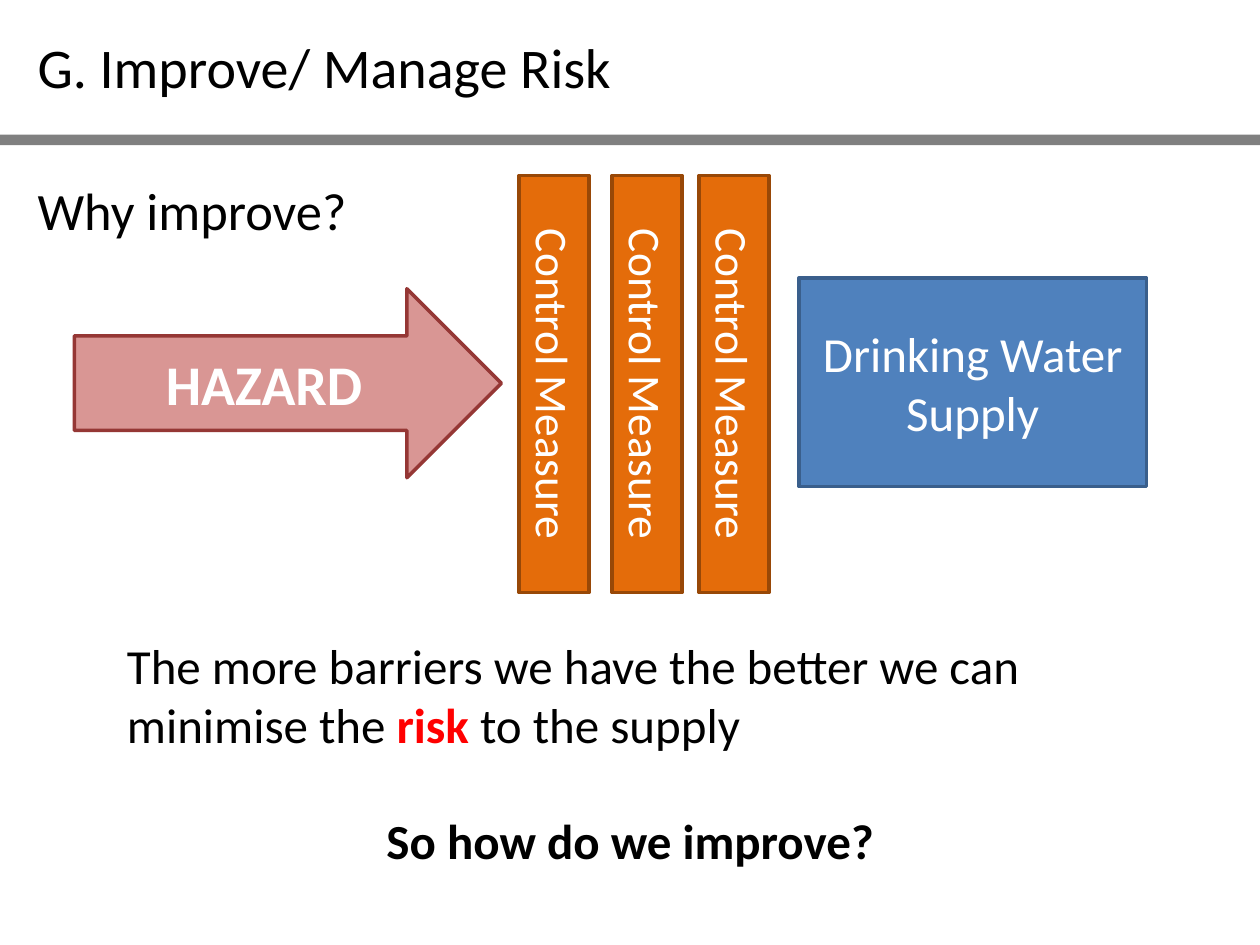
from pptx import Presentation
from pptx.dml.color import RGBColor
from pptx.enum.shapes import MSO_SHAPE as Preset
from pptx.enum.text import MSO_ANCHOR as Anchor, PP_ALIGN as Align
from pptx.util import Pt

BLACK = RGBColor(0x00, 0x00, 0x00)
WHITE = RGBColor(0xFF, 0xFF, 0xFF)
RED = RGBColor(0xFF, 0x00, 0x00)
GREY = RGBColor(0x80, 0x80, 0x80)
PINK = RGBColor(0xD9, 0x96, 0x94)
DARK_RED = RGBColor(0x95, 0x37, 0x35)
BLUE = RGBColor(0x4F, 0x81, 0xBD)
DARK_BLUE = RGBColor(0x3A, 0x5F, 0x8C)
ORANGE = RGBColor(0xE4, 0x6C, 0x0A)
BROWN = RGBColor(0x98, 0x48, 0x07)

presentation = Presentation()
presentation.slide_width, presentation.slide_height = Pt(720), Pt(540)
slide = presentation.slides.add_slide(presentation.slide_layouts[6])


def write(shape, size, runs, align):
    """Fill a shape with one paragraph of (text, colour, bold) runs."""
    shape.text_frame.word_wrap = True
    paragraph = shape.text_frame.paragraphs[0]
    paragraph.alignment = align
    for text, color, bold in runs:
        run = paragraph.add_run()
        run.text = text
        run.font.name = "Calibri"
        run.font.size = Pt(size)
        run.font.bold = bold
        run.font.color.rgb = color


def add_block(preset, box, fill, line=None):
    shape = slide.shapes.add_shape(preset, *map(Pt, box))
    shape.shadow.inherit = False
    shape.fill.solid()
    shape.fill.fore_color.rgb = fill
    if line is None:
        shape.line.fill.background()
    else:
        shape.line.color.rgb = line
        shape.line.width = Pt(2)
    shape.text_frame.vertical_anchor = Anchor.MIDDLE
    return shape


# Rule under the title
add_block(Preset.RECTANGLE, (0, 77, 720, 6), GREY)

# Hazard and the supply it threatens
hazard = add_block(Preset.RIGHT_ARROW, (42.5, 165, 244, 108), PINK, DARK_RED)
write(hazard, 32, [("HAZARD", WHITE, True)], Align.CENTER)
supply = add_block(Preset.RECTANGLE, (456.5, 159, 198.7, 119), BLUE, DARK_BLUE)
write(supply, 28, [("Drinking Water Supply", WHITE, False)], Align.CENTER)

# Barriers between them, turned to read downwards
for left in (300.2, 250.6, 197.5):
    barrier = add_block(Preset.RECTANGLE, (left, 199.4, 238.3, 40), ORANGE, BROWN)
    barrier.rotation = 90
    write(barrier, 26, [("Control Measure", WHITE, False)], Align.CENTER)

# Title, question and conclusions
texts = [
    ((14.4, 15, 618, 46), 32, Align.LEFT, [("G. Improve/ Manage Risk", BLACK, False)]),
    ((14.4, 98, 238, 44), 30, Align.LEFT, [("Why improve?", BLACK, False)]),
    ((65.5, 359.5, 618, 75), 28, Align.LEFT, [
        ("The more barriers we have the better we can minimise the ", BLACK, False),
        ("risk", RED, True),
        (" to the supply", BLACK, False),
    ]),
    ((190, 459.5, 340, 41), 28, Align.CENTER, [("So how do we improve?", BLACK, True)]),
]
for box, size, align, runs in texts:
    write(slide.shapes.add_textbox(*map(Pt, box)), size, runs, align)

presentation.save("out.pptx")
